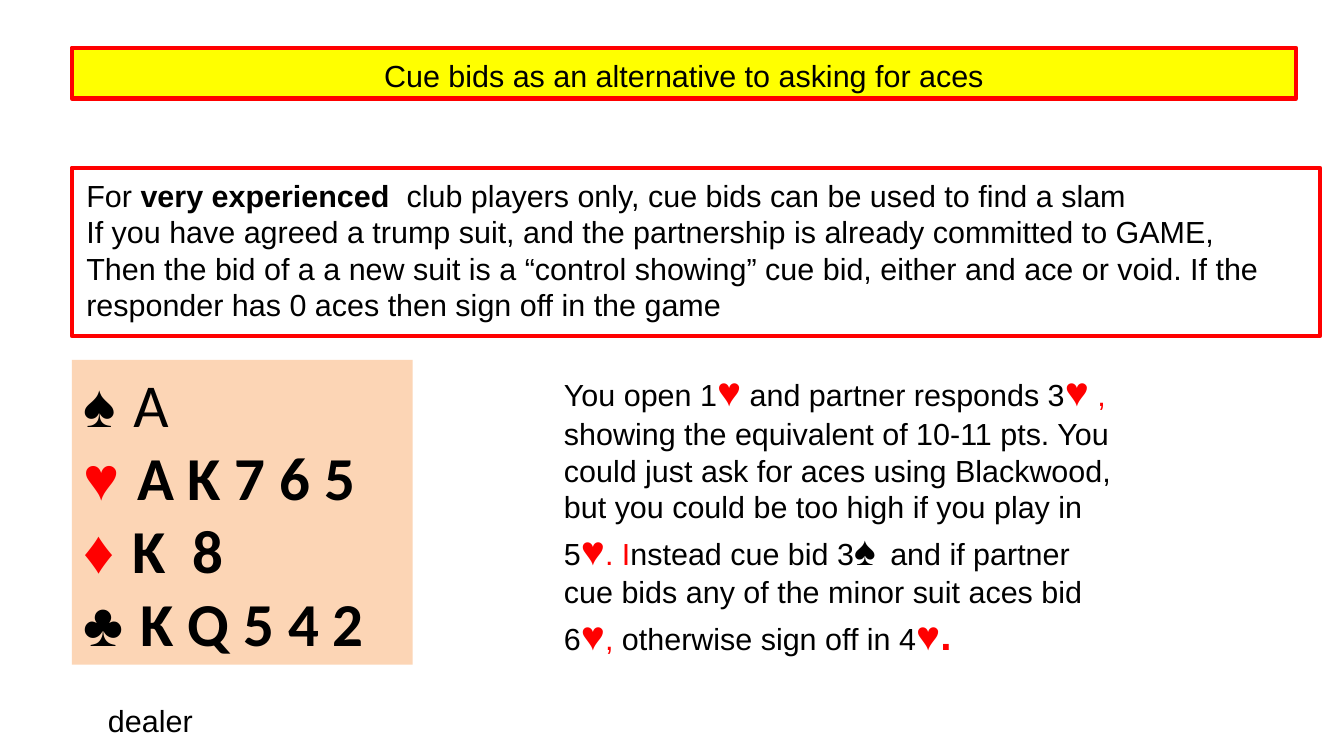
import dataclasses
import typing

import pptx
import pptx.dml.color
import pptx.enum.shapes
import pptx.enum.text
import pptx.util

Cm = pptx.util.Cm
Pt = pptx.util.Pt
BLACK, RED, YELLOW, PEACH = "000000", "FF0000", "FFFF00", "FCD5B5"


@dataclasses.dataclass
class Run:
    text: str
    size: float = 18
    color: str = BLACK
    bold: bool = False
    font: str = "Arial"


@dataclasses.dataclass
class Box:
    """A block of text; lengths are in centimetres."""
    left: float
    top: float
    width: float
    height: float
    lines: list[list[Run]]
    fill: typing.Optional[str] = None
    edge: typing.Optional[str] = None
    center: bool = False
    plain: bool = False
    pad: tuple[float, float] = (0.25, 0.13)


def rgb(code: str) -> pptx.dml.color.RGBColor:
    return pptx.dml.color.RGBColor.from_string(code)


def suit(sign: str) -> Run:
    """A red suit sign within the running text."""
    return Run(sign, 24, RED, True)


def holding(sign: str, cards: str, color: str = BLACK, bold: bool = True) -> list[Run]:
    """One suit of the hand."""
    return [Run(sign + " ", 36, color, bold), Run(cards, 36, BLACK, bold, "Calibri")]


def write(frame: typing.Any, box: Box) -> None:
    frame.word_wrap = True
    frame.vertical_anchor = pptx.enum.text.MSO_ANCHOR.TOP
    frame.margin_left = frame.margin_right = Cm(box.pad[0])
    frame.margin_top = frame.margin_bottom = Cm(box.pad[1])
    align = pptx.enum.text.PP_ALIGN
    for i, line in enumerate(box.lines):
        para = frame.add_paragraph() if i else frame.paragraphs[0]
        para.alignment = align.CENTER if box.center else align.LEFT
        for part in line:
            run = para.add_run()
            run.text = part.text
            run.font.size = Pt(part.size)
            run.font.name = part.font
            run.font.bold = part.bold
            run.font.color.rgb = rgb(part.color)


def draw(slide: typing.Any, box: Box) -> None:
    place = [Cm(n) for n in (box.left, box.top, box.width, box.height)]
    if box.plain:
        shape = slide.shapes.add_textbox(*place)
    else:
        shape = slide.shapes.add_shape(pptx.enum.shapes.MSO_SHAPE.RECTANGLE, *place)
        shape.shadow.inherit = False
        if box.fill:
            shape.fill.solid()
            shape.fill.fore_color.rgb = rgb(box.fill)
        else:
            shape.fill.background()
        if box.edge:
            shape.line.color.rgb = rgb(box.edge)
            shape.line.width = Pt(2.83)
        else:
            shape.line.fill.background()
    write(shape.text_frame, box)


EDGE = 1.5
WIDE = (0.3, 0.18)

TITLE = Box(EDGE, 1, 25.5, 1.05,
            [[Run("Cue bids as an alternative to asking for aces")]],
            fill=YELLOW, edge=RED, center=True, pad=WIDE)

RULES = Box(EDGE, 3.5, 26, 3.5, [
    [Run("For"), Run(" very experienced ", bold=True),
     Run(" club players only, cue bids can be used to find a slam")],
    [Run("If you have agreed a trump suit, and the partnership is "
         "already committed to GAME,")],
    [Run("Then the bid of a a new suit is a “control showing” cue bid, either "
         "and ace or void. If the responder has 0 aces then sign off in the game")],
], edge=RED, pad=WIDE)

HAND = Box(EDGE, 7.5, 7.1, 6.35, [
    holding("♠", "A", bold=False),
    holding("♥", "A K 7 6 5", RED),
    holding("♦", "K  8", RED),
    holding("♣", "K Q 5 4 2"),
], fill=PEACH)

DEALER = Box(2, 14.5, 7, 0.97, [[Run("dealer")]], plain=True)

ADVICE = Box(11.5, 7.5, 12, 6.53, [[
    Run("You open 1"), suit("♥"), Run(" and partner responds 3"),
    suit("♥"), Run(" ,", color=RED),
    Run(" showing the equivalent of 10-11 pts. You could just ask for aces using "
        "Blackwood, but you could be too high if you play in 5"),
    suit("♥"), Run(". I", color=RED), Run("nstead cue bid 3"),
    Run("♠", 24), Run(" ", 13),
    Run(" and if partner cue bids any of the minor suit aces bid 6"),
    suit("♥"), Run(", ", color=RED), Run("otherwise sign off in 4"), suit("♥."),
]], plain=True)


def main() -> None:
    deck = pptx.Presentation()
    deck.slide_width, deck.slide_height = Cm(28), Cm(15.75)
    slide = deck.slides.add_slide(deck.slide_layouts[6])
    for box in (TITLE, RULES, HAND, DEALER, ADVICE):
        draw(slide, box)
    deck.save("out.pptx")


if __name__ == "__main__":
    main()
